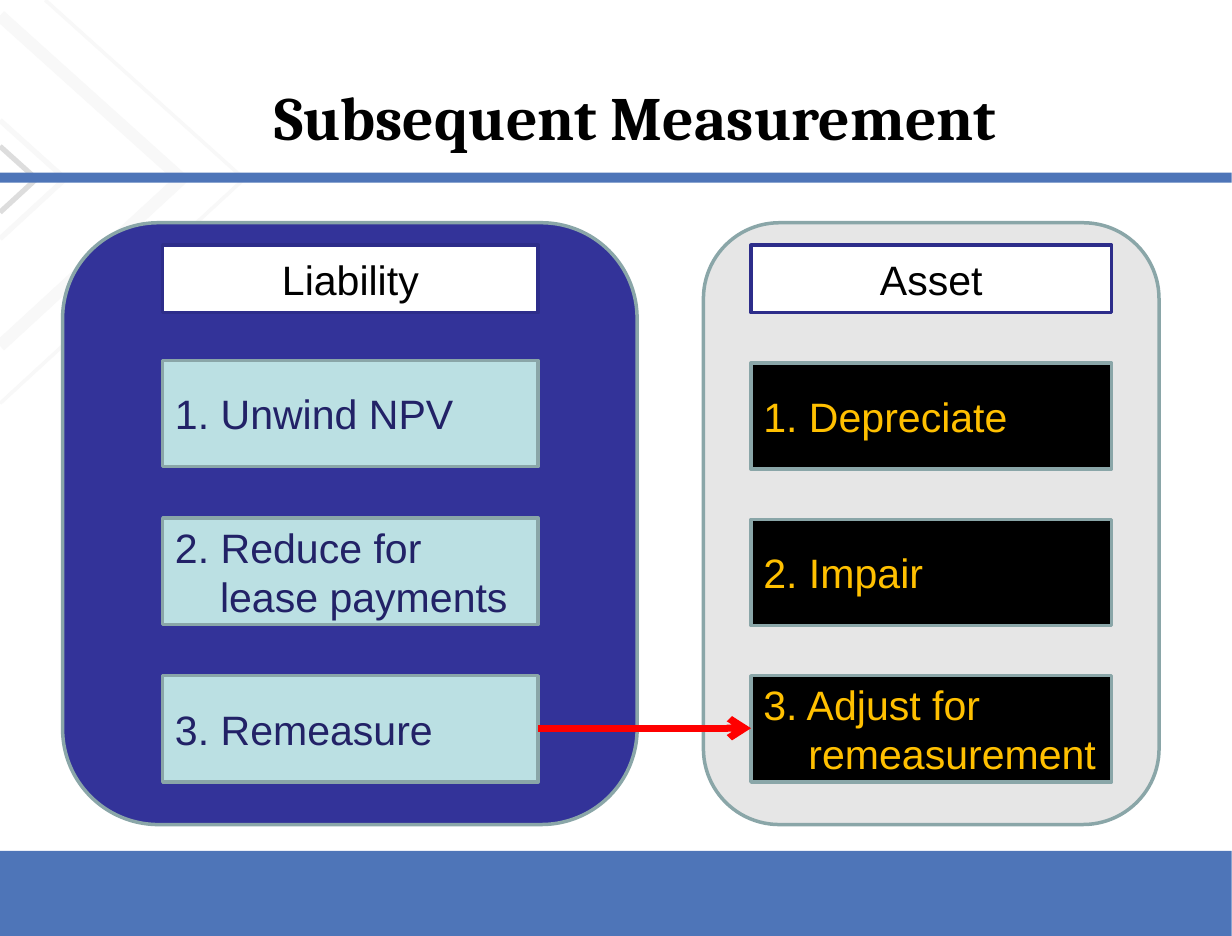
from pptx import Presentation
from pptx.dml.color import RGBColor
from pptx.enum import shapes, text
from pptx.oxml.ns import qn
from pptx.util import Cm, Inches, Pt
from lxml import etree

BLACK = RGBColor(0, 0, 0)
WHITE = RGBColor(255, 255, 255)
BLUE = RGBColor(0x4E, 0x75, 0xB8)
PALE = RGBColor(0xF8, 0xF8, 0xF8)
SILVER = RGBColor(0xDD, 0xDD, 0xDD)
GREY = RGBColor(0xE6, 0xE6, 0xE6)
SAGE = RGBColor(0x8A, 0xA6, 0xA8)
INDIGO = RGBColor(0x33, 0x33, 0x99)
NAVY = RGBColor(0x2D, 0x2D, 0x8A)
AQUA = RGBColor(0xBB, 0xE0, 0xE3)
INK = RGBColor(0x22, 0x22, 0x67)
GOLD = RGBColor(0xFF, 0xC0, 0)
RED = RGBColor(255, 0, 0)
RECT = shapes.MSO_SHAPE.RECTANGLE
ROUND = shapes.MSO_SHAPE.ROUNDED_RECTANGLE
LEFT = text.PP_ALIGN.LEFT
CENTER = text.PP_ALIGN.CENTER

deck = Presentation()
deck.slide_width, deck.slide_height = Cm(25), Cm(19)
slide = deck.slides.add_slide(deck.slide_layouts[5])


def add_block(kind, box, fill, edge=None):
    block = slide.shapes.add_shape(kind, *map(Inches, box))
    block.shadow.inherit = False
    block.fill.solid()
    block.fill.fore_color.rgb = fill
    if edge is None:
        block.line.fill.background()
    else:
        block.line.color.rgb = edge
        block.line.width = Pt(2)
    return block


def write(frame, lines, align, style):
    frame.word_wrap = True
    frame.vertical_anchor = text.MSO_ANCHOR.MIDDLE
    frame.text = "\n".join(lines)
    for index, para in enumerate(frame.paragraphs):
        para.alignment = align
        if index:
            para._p.get_or_add_pPr().set("marL", str(Inches(0.36)))
        for run in para.runs:
            for key, value in style.items():
                if key == "color":
                    run.font.color.rgb = value
                else:
                    setattr(run.font, key, value)


add_block(RECT, (0, 6.8, 9.84, 0.68), BLUE)
mid = 1.43
for tip, color, width in [(0.29, SILVER, 3), (0.52, PALE, 3), (1.45, PALE, 7), (1.95, PALE, 2)]:
    rise = min(tip, mid / 0.9)
    points = [(tip - rise, mid - 0.9 * rise), (tip, mid), (0, mid + 0.92 * tip)]
    points = [(Inches(x), Inches(y)) for x, y in points]
    pen = slide.shapes.build_freeform(*points[0])
    pen.add_line_segments(points[1:], close=False)
    chevron = pen.convert_to_shape()
    chevron.shadow.inherit = False
    chevron.fill.background()
    chevron.line.color.rgb = color
    chevron.line.width = Pt(width)
add_block(RECT, (0, 1.38, 9.84, 0.08), BLUE)

title = slide.shapes.title
place = {"left": 1.2, "top": 0.3, "width": 7.75, "height": 1.25}
for key, value in place.items():
    setattr(title, key, Inches(value))
write(title.text_frame, ["Subsequent Measurement"], CENTER,
      {"name": "Cambria", "size": Pt(35.4), "bold": True, "color": BLACK})

asset = [(2.9, ["1. Depreciate"]), (4.15, ["2. Impair"]),
         (5.4, ["3. Adjust for", "remeasurement"])]
debt = [(2.88, ["1. Unwind NPV"]), (4.14, ["2. Reduce for", "lease payments"]),
        (5.4, ["3. Remeasure"])]
panels = [
    ("Asset", 5.62, 3.64, GREY, 6, 2.88, BLACK, GOLD, asset),
    ("Liability", 0.5, 4.59, INDIGO, 1.3, 3, AQUA, INK, debt),
]
for name, left, span, back, x, width, fill, ink, steps in panels:
    add_block(ROUND, (left, 1.78, span, 4.81), back, SAGE)
    style = {"name": "Arial", "size": Pt(23.6), "color": BLACK}
    head = add_block(RECT, (x, 1.96, width, 0.54), WHITE, NAVY)
    write(head.text_frame, [name], CENTER, style)
    for y, lines in steps:
        step = add_block(RECT, (x, y, width, 0.85), fill, SAGE)
        write(step.text_frame, lines, LEFT, {**style, "color": ink})

arrow = slide.shapes.add_connector(
    shapes.MSO_CONNECTOR.STRAIGHT, Inches(4.3), Inches(5.82), Inches(6), Inches(5.82))
arrow.line.color.rgb = RED
arrow.line.width = Pt(4)
etree.SubElement(arrow.line._get_or_add_ln(), qn("a:tailEnd"), type="arrow")
etree.SubElement(arrow._element.spPr, qn("a:effectLst"))

deck.save("out.pptx")
